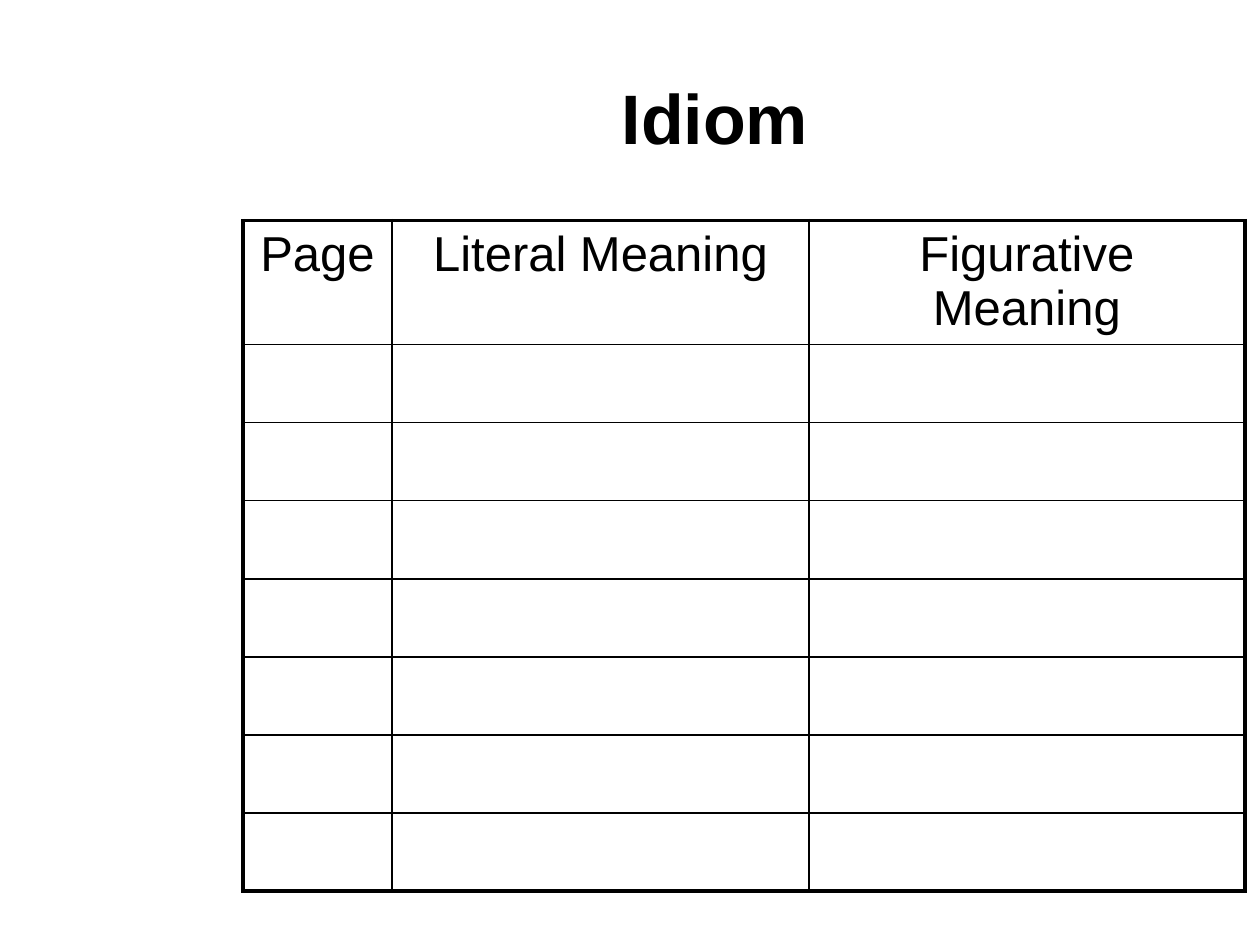
from dataclasses import dataclass

from lxml import etree
from pptx import Presentation
from pptx.dml.color import RGBColor
from pptx.enum.text import MSO_ANCHOR, PP_ALIGN
from pptx.oxml.ns import qn
from pptx.table import _Cell
from pptx.text.text import TextFrame
from pptx.util import Inches, Pt

CENTER = PP_ALIGN.CENTER
MIDDLE = MSO_ANCHOR.MIDDLE
BLACK = RGBColor(0, 0, 0)
FONT = "Arial"
THIN, THICK = Pt(1), Pt(2.25)
ROW_COUNT = 8
ROW_HEIGHT = 0.62
HEADING_HEIGHT = 0.97


@dataclass
class Column:
    heading: str
    width: float


COLUMNS = [
    Column("Page", 1.18),
    Column("Literal Meaning", 3.31),
    Column("Figurative Meaning", 3.46),
]


def write_centered(frame: TextFrame, text: str, size: int, bold: bool = False) -> None:
    frame.text = text
    para = frame.paragraphs[0]
    para.alignment = CENTER
    font = para.runs[0].font
    font.name, font.size, font.bold = FONT, Pt(size), bold
    font.color.rgb = BLACK


def set_borders(cell: _Cell, row: int, column: int) -> None:
    """Draw thin inner lines and a thick frame around the whole table."""
    outer_sides = {
        "a:lnL": column == 0,
        "a:lnR": column == len(COLUMNS) - 1,
        "a:lnT": row == 0,
        "a:lnB": row == ROW_COUNT - 1,
    }
    properties = cell._tc.get_or_add_tcPr()
    for side, is_outer in outer_sides.items():
        line = etree.SubElement(properties, qn(side), w=str(THICK if is_outer else THIN))
        fill = etree.SubElement(line, qn("a:solidFill"))
        etree.SubElement(fill, qn("a:srgbClr"), val=str(BLACK))


def main() -> None:
    deck = Presentation()
    deck.slide_width, deck.slide_height = Inches(10), Inches(7.5)
    page = deck.slides.add_slide(deck.slide_layouts[6])

    title = page.shapes.add_textbox(Inches(1.85), Inches(0.3), Inches(7.65), Inches(1.25))
    title.text_frame.word_wrap = True
    title.text_frame.vertical_anchor = MIDDLE
    write_centered(title.text_frame, "Idiom", 40, bold=True)

    row_heights = [HEADING_HEIGHT] + [ROW_HEIGHT] * (ROW_COUNT - 1)
    table_width = sum(column.width for column in COLUMNS)
    table = page.shapes.add_table(
        ROW_COUNT, len(COLUMNS), Inches(1.93), Inches(1.75),
        Inches(table_width), Inches(sum(row_heights)),
    ).table
    table.first_row = table.horz_banding = False
    for row, height in zip(table.rows, row_heights):
        row.height = Inches(height)

    for index, column in enumerate(COLUMNS):
        table.columns[index].width = Inches(column.width)
        heading = table.cell(0, index)
        heading.margin_bottom = 0
        write_centered(heading.text_frame, column.heading, 28)
        for row in range(ROW_COUNT):
            cell = table.cell(row, index)
            set_borders(cell, row, index)
            cell.fill.background()

    deck.save("out.pptx")


if __name__ == "__main__":
    main()
